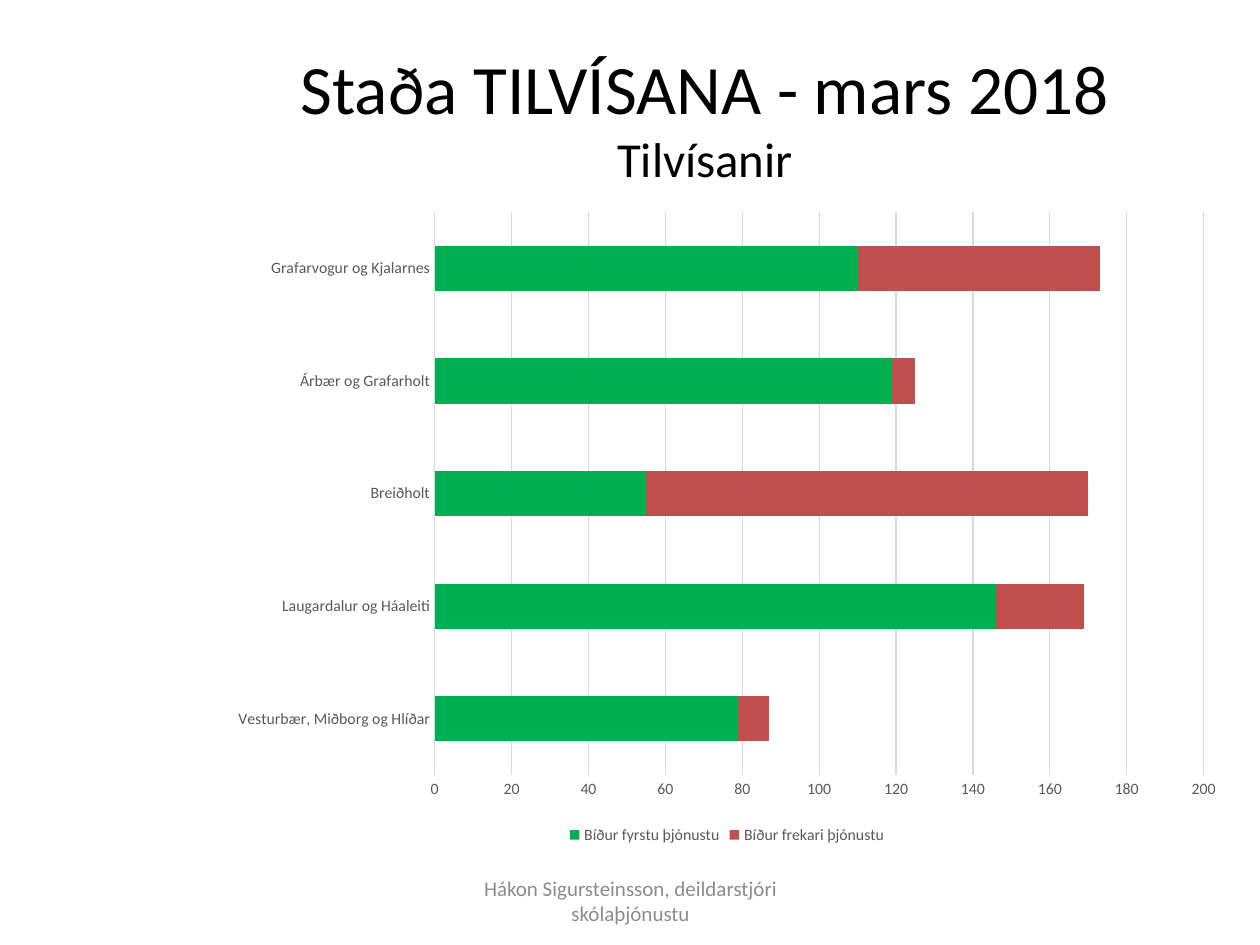
import pptx
import pptx.chart.data
import pptx.dml.color
import pptx.enum.chart
import pptx.enum.text
import pptx.util
from pptx.util import Inches

FONT = "Calibri"
GRAY = "595959"
LIGHT = "D9D9D9"
CATEGORIES = ["Vesturbær, Miðborg og Hlíðar", "Laugardalur og Háaleiti",
              "Breiðholt", "Árbær og Grafarholt", "Grafarvogur og Kjalarnes"]
SERIES = [("Bíður fyrstu þjónustu", [79, 146, 55, 119, 110], "00B050"),
          ("Bíður frekari þjónustu", [8, 23, 115, 6, 63], "C0504D")]


def rgb(color):
    return pptx.dml.color.RGBColor.from_string(color)


def style_font(font, color, size=None):
    font.name = FONT
    font.color.rgb = rgb(color)
    if size:
        font.size = pptx.util.Pt(size)


def style_line(line, color):
    line.color.rgb = rgb(color)
    line.width = pptx.util.Pt(0.75)


def place(sp, left, top, width, height):
    sp.left, sp.top = Inches(left), Inches(top)
    sp.width, sp.height = Inches(width), Inches(height)


def center_text(tf):
    tf.word_wrap = True
    tf.vertical_anchor = pptx.enum.text.MSO_ANCHOR.MIDDLE
    p = tf.paragraphs[0]
    p.alignment = pptx.enum.text.PP_ALIGN.CENTER
    return p


def add_title(s, heading, subheading):
    sp = s.shapes.title
    place(sp, 1.69, 0.3, 7.81, 1.25)
    sp.text_frame.auto_size = pptx.enum.text.MSO_AUTO_SIZE.NONE
    p = center_text(sp.text_frame)
    style_font(p.font, "000000")
    r = p.add_run()
    r.text = heading
    r.font.size = pptx.util.Pt(39.6)
    p.add_line_break()
    r = p.add_run()
    r.text = subheading
    r.font.size = pptx.util.Pt(27.9)


def add_footer(s, text):
    sp = s.shapes.add_textbox(Inches(3.42), Inches(6.95), Inches(3.17), Inches(0.4))
    p = center_text(sp.text_frame)
    p.text = text
    style_font(p.font, "8C8C8C", 12)


def style_axis(axis):
    axis.major_tick_mark = pptx.enum.chart.XL_TICK_MARK.NONE
    axis.minor_tick_mark = pptx.enum.chart.XL_TICK_MARK.NONE
    style_font(axis.tick_labels.font, GRAY, 9)


def add_referral_chart(s):
    data = pptx.chart.data.CategoryChartData()
    data.categories = CATEGORIES
    for name, values, _ in SERIES:
        data.add_series(name, values)
    chart = s.shapes.add_chart(
        pptx.enum.chart.XL_CHART_TYPE.BAR_STACKED,
        Inches(1.73), Inches(1.58), Inches(8.08), Inches(5.16), data).chart
    chart.has_title = False
    style_font(chart.font, "000000", 10)

    # Bars
    plot = chart.plots[0]
    plot.gap_width = 150
    plot.overlap = 100
    plot.vary_by_categories = False
    for series, (_, _, color) in zip(plot.series, SERIES):
        series.format.fill.solid()
        series.format.fill.fore_color.rgb = rgb(color)

    # Axes
    style_axis(chart.category_axis)
    style_line(chart.category_axis.format.line, LIGHT)
    values = chart.value_axis
    style_axis(values)
    values.format.line.fill.background()
    values.minimum_scale, values.maximum_scale, values.major_unit = 0, 200, 20
    values.has_major_gridlines = True
    style_line(values.major_gridlines.format.line, LIGHT)

    # Legend
    chart.has_legend = True
    chart.legend.position = pptx.enum.chart.XL_LEGEND_POSITION.BOTTOM
    chart.legend.include_in_layout = False
    style_font(chart.legend.font, GRAY, 9)


def main():
    prs = pptx.Presentation()
    prs.slide_width, prs.slide_height = Inches(10), Inches(7.5)
    s = prs.slides.add_slide(prs.slide_layouts[5])
    add_title(s, "Staða TILVÍSANA - mars 2018", "Tilvísanir")
    add_footer(s, "Hákon Sigursteinsson, deildarstjóri skólaþjónustu")
    add_referral_chart(s)
    prs.save("out.pptx")


if __name__ == "__main__":
    main()
